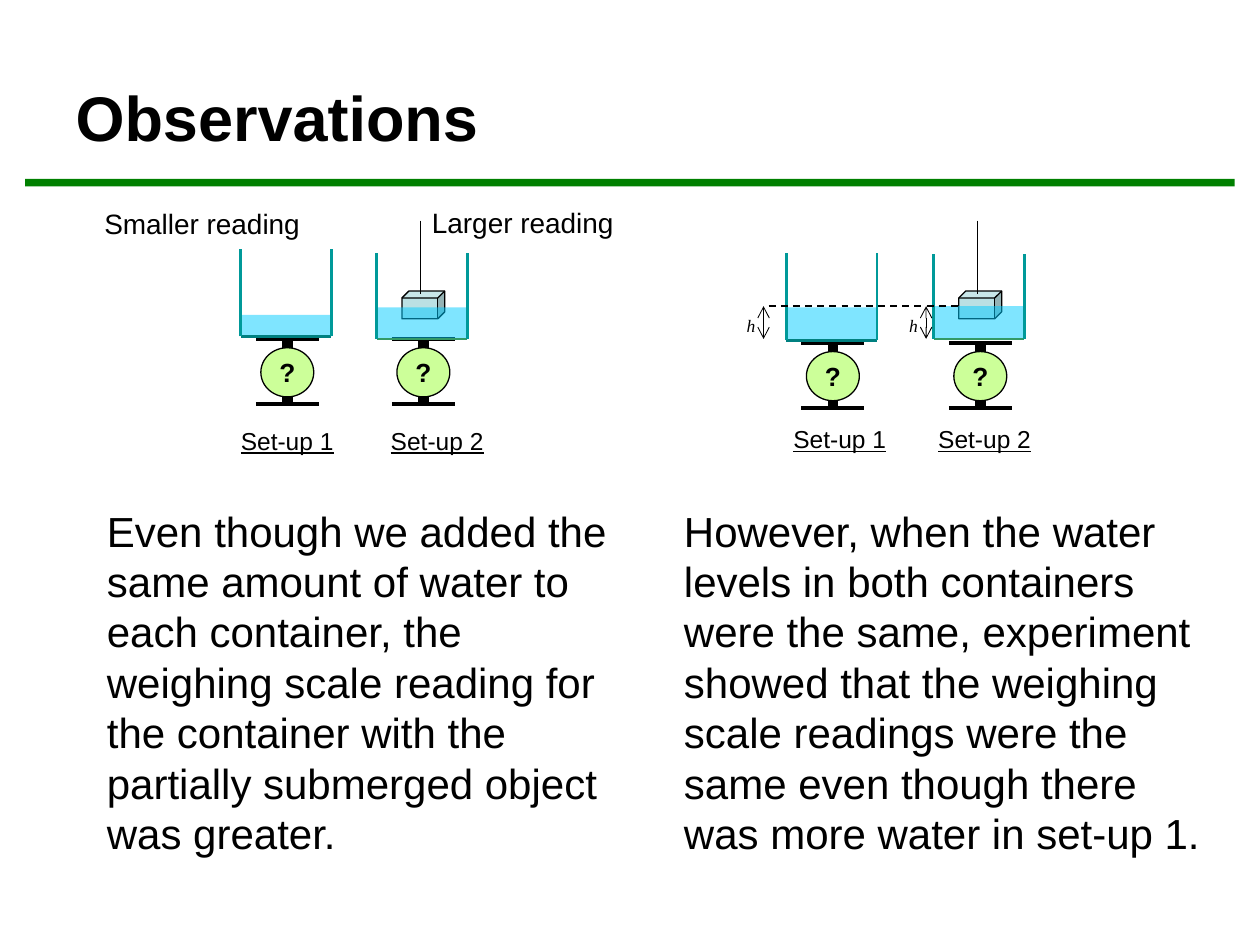
from lxml import etree
from pptx import Presentation
from pptx.dml.color import RGBColor
from pptx.enum.dml import MSO_LINE
from pptx.enum.shapes import MSO_CONNECTOR, MSO_SHAPE
from pptx.enum.text import MSO_ANCHOR, PP_ALIGN
from pptx.oxml.ns import qn
from pptx.util import Inches, Pt

BLACK = RGBColor(0, 0, 0)
WHITE = RGBColor(255, 255, 255)
GREEN = RGBColor(0, 128, 0)
DIAL = RGBColor(0xCC, 0xFF, 0x99)
WATER = RGBColor(0x00, 0xCC, 0xFF)
BLOCK = RGBColor(0xBB, 0xE0, 0xE3)
WALL = RGBColor(0x00, 0x99, 0x99)
BASE_TEAL = RGBColor(0x00, 0x80, 0x80)
BASE_GREEN = RGBColor(0x33, 0x99, 0x66)

RECTANGLE, ELLIPSE, CUBE = MSO_SHAPE.RECTANGLE, MSO_SHAPE.OVAL, MSO_SHAPE.CUBE
STRAIGHT, DASH = MSO_CONNECTOR.STRAIGHT, MSO_LINE.DASH
LEFT, CENTER = PP_ALIGN.LEFT, PP_ALIGN.CENTER
TOP, MIDDLE = MSO_ANCHOR.TOP, MSO_ANCHOR.MIDDLE

LEFT_TEXT = (
    "Even though we added the same amount of water to each container, "
    "the weighing scale reading for the container with the partially "
    "submerged object was greater."
)
RIGHT_TEXT = (
    "However, when the water levels in both containers were the same, "
    "experiment showed that the weighing scale readings were the same "
    "even though there was more water in set-up 1."
)


def write(shape, text, size, align=LEFT, anchor=TOP, font_name="Arial", inset=0.1,
          bold=False, italic=False, underline=False):
    """Put one formatted run into a shape."""
    frame = shape.text_frame
    frame.word_wrap = True
    frame.vertical_anchor = anchor
    frame.margin_left = frame.margin_right = Inches(inset)
    paragraph = frame.paragraphs[0]
    paragraph.alignment = align
    run = paragraph.add_run()
    run.text = text
    font = run.font
    font.name, font.size = font_name, Pt(size)
    font.bold, font.italic, font.underline = bold, italic, underline
    font.color.rgb = BLACK


def add_text(slide, box, text, size):
    """Add a wrapping text box."""
    shape = slide.shapes.add_textbox(*map(Inches, box))
    write(shape, text, size)


def add_shape(slide, kind, box, fill, outline=None):
    """Add a flat preset shape."""
    shape = slide.shapes.add_shape(kind, *map(Inches, box))
    shape.shadow.inherit = False
    shape.fill.solid()
    shape.fill.fore_color.rgb = fill
    if outline is None:
        shape.line.fill.background()
    else:
        shape.line.color.rgb = outline
        shape.line.width = Pt(0.75)
    return shape


def add_line(slide, start, end, width, color=BLACK):
    """Add a straight line without a shadow."""
    line = slide.shapes.add_connector(STRAIGHT, *map(Inches, (*start, *end)))
    line.line.color.rgb = color
    line.line.width = Pt(width)
    etree.SubElement(line._element.spPr, qn("a:effectLst"))
    return line


def add_scale(slide, center, top):
    """Draw a weighing scale with an unknown reading."""
    bottom = top + 0.52
    add_line(slide, (center, top), (center, bottom), 6)
    for y in (top, bottom):
        add_line(slide, (center - 0.25, y), (center + 0.25, y), 2.25)
    dial = add_shape(slide, ELLIPSE, (center - 0.21, top + 0.07, 0.42, 0.39), DIAL, BLACK)
    write(dial, "?", 15, CENTER, MIDDLE, inset=0, bold=True)


def add_container(slide, left, top, bottom, water_top, base_color):
    """Draw an open container with translucent water."""
    right = left + 0.72
    water = add_shape(slide, RECTANGLE, (left, water_top, 0.72, bottom - water_top), WATER)
    color = water._element.spPr.find(".//" + qn("a:srgbClr"))
    etree.SubElement(color, qn("a:alpha"), val="50000")
    add_line(slide, (left, bottom), (right, bottom), 1.5, base_color)
    for x in (left, right):
        add_line(slide, (x, bottom), (x, top), 1.5, WALL)


def add_setup(slide, number, left, scale_top, top, bottom, water_top, label_box):
    """Draw a numbered set-up; the second one has a hanging block."""
    hanging = number == 2
    add_scale(slide, left + 0.37, scale_top)
    if hanging:
        add_shape(slide, CUBE, (left + 0.2, 2.31, 0.34, 0.22), BLOCK, BLACK)
        add_line(slide, (left + 0.35, 1.75), (left + 0.35, 2.33), 0.75)
    add_container(slide, left, top, bottom, water_top, BASE_GREEN if hanging else BASE_TEAL)
    label = add_shape(slide, RECTANGLE, label_box, WHITE)
    write(label, f"Set-up {number}", 14, CENTER, inset=0, underline=True)


def add_height(slide, x, label_left):
    """Mark the water height with a double arrow and its symbol."""
    label = add_shape(slide, RECTANGLE, (label_left, 2.45, 0.2, 0.24), WHITE)
    write(label, "h", 10, CENTER, font_name="Times New Roman", inset=0, italic=True)
    arrow = add_line(slide, (x, 2.43), (x, 2.69), 0.5)
    outline = arrow.line._get_or_add_ln()
    for tag in ("a:headEnd", "a:tailEnd"):
        etree.SubElement(outline, qn(tag), type="arrow")


def add_title(slide, text):
    """Format the title and draw the rule below it."""
    add_shape(slide, RECTANGLE, (0.2, 1.42, 9.6, 0.06), GREEN)
    title = slide.shapes.title
    title.left, title.top, title.width, title.height = map(Inches, (0.5, 0.3, 9, 1.25))
    write(title, text, 36, anchor=MIDDLE, bold=True)


def main():
    """Build and save the slide."""
    presentation = Presentation()
    presentation.slide_width, presentation.slide_height = Inches(10), Inches(7.5)
    slide = presentation.slides.add_slide(presentation.slide_layouts[5])
    add_title(slide, "Observations")

    add_text(slide, (0.75, 3.96, 4.19, 2.92), LEFT_TEXT, 24)
    add_text(slide, (5.33, 3.96, 4.33, 2.93), RIGHT_TEXT, 24)
    add_text(slide, (3.33, 1.58, 1.83, 0.37), "Larger reading", 16)
    add_text(slide, (0.73, 1.59, 1.83, 0.37), "Smaller reading", 16)

    add_setup(slide, 2, 2.99, 2.69, 2.01, 2.69, 2.44, (2.94, 3.33, 1.06, 0.33))
    add_setup(slide, 1, 1.91, 2.69, 1.98, 2.67, 2.5, (1.75, 3.33, 1.06, 0.29))
    add_setup(slide, 2, 7.41, 2.72, 2.02, 2.69, 2.43, (7.33, 3.32, 0.97, 0.36))
    add_setup(slide, 1, 6.24, 2.72, 2.01, 2.7, 2.44, (6.17, 3.32, 0.99, 0.36))

    level = add_line(slide, (6.1, 2.43), (7.61, 2.43), 1)
    level.line.dash_style = DASH
    add_height(slide, 6.06, 5.86)
    add_height(slide, 7.35, 7.15)
    presentation.save("out.pptx")


if __name__ == "__main__":
    main()
